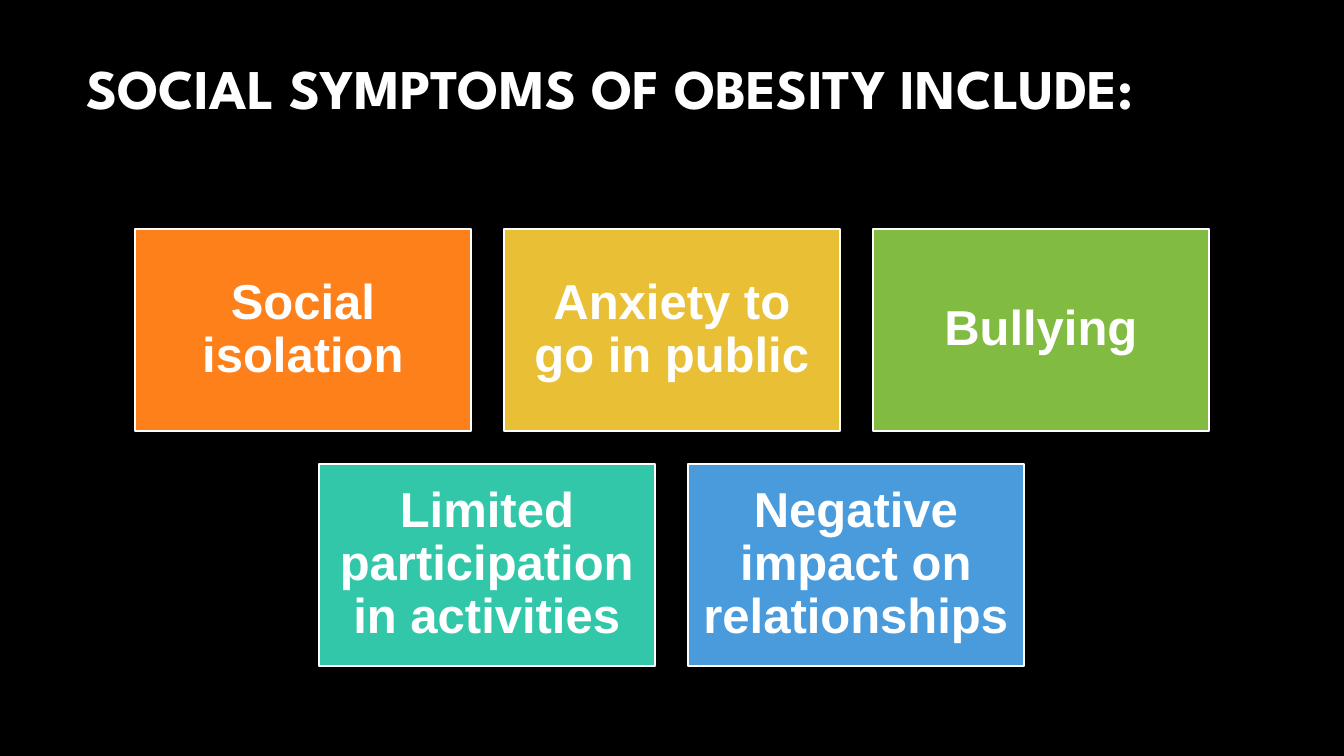
import pptx
import pptx.util
import pptx.dml.color
import pptx.enum.shapes
import pptx.enum.text

RGB = pptx.dml.color.RGBColor
BLACK = RGB(0x00, 0x00, 0x00)
WHITE = RGB(0xFF, 0xFF, 0xFF)
ORANGE = RGB(0xFE, 0x80, 0x1A)
GOLD = RGB(0xE9, 0xBF, 0x35)
GREEN = RGB(0x81, 0xBB, 0x42)
TEAL = RGB(0x32, 0xC7, 0xA9)
BLUE = RGB(0x4A, 0x9B, 0xDC)

WIDE, HIGH = 1344, 756
SCALE = 12192000 / WIDE


def px(count):
    return pptx.util.Emu(round(count * SCALE))


def write(frame, text, font="Arial", size=35, color=WHITE, align="LEFT", inset=None):
    frame.word_wrap = True
    frame.auto_size = pptx.enum.text.MSO_AUTO_SIZE.NONE
    frame.vertical_anchor = pptx.enum.text.MSO_ANCHOR.MIDDLE
    if inset is not None:
        frame.margin_left = frame.margin_right = px(inset)
        frame.margin_top = frame.margin_bottom = px(inset)
    para = frame.paragraphs[0]
    para.alignment = getattr(pptx.enum.text.PP_ALIGN, align)
    para.line_spacing = 0.9
    run = para.add_run()
    run.text = text
    run.font.name = font
    run.font.size = pptx.util.Pt(size)
    run.font.bold = True
    run.font.color.rgb = color


class Deck:
    def __init__(self):
        self.show = pptx.Presentation()
        self.show.slide_width, self.show.slide_height = px(WIDE), px(HIGH)
        self.slide = self.show.slides.add_slide(self.show.slide_layouts[5])
        fill = self.slide.background.fill
        fill.solid()
        fill.fore_color.rgb = BLACK

    def title(self, text, left, top, width, height):
        shape = self.slide.shapes.title
        shape.left, shape.top = px(left), px(top)
        shape.width, shape.height = px(width), px(height)
        write(shape.text_frame, text, font="League Spartan", size=40)

    def card(self, text, color, left, top, width, height):
        shape = self.slide.shapes.add_shape(
            pptx.enum.shapes.MSO_SHAPE.RECTANGLE,
            px(left), px(top), px(width), px(height))
        shape.shadow.inherit = False
        shape.fill.solid()
        shape.fill.fore_color.rgb = color
        shape.line.color.rgb = WHITE
        shape.line.width = pptx.util.Pt(1)
        write(shape.text_frame, text, align="CENTER", inset=15)

    def row(self, cards, top, width=336, height=202, gap=33):
        # Each row is centred on the slide
        span = len(cards) * (width + gap) - gap
        left = (WIDE - span) // 2
        for i, (text, color) in enumerate(cards):
            self.card(text, color, left + i * (width + gap), top, width, height)


def main():
    deck = Deck()

    # Heading
    deck.title("SOCIAL SYMPTOMS OF OBESITY INCLUDE:", 76, 46, 1192, 90)

    # Symptom cards
    deck.row([("Social isolation", ORANGE),
              ("Anxiety to go in public", GOLD),
              ("Bullying", GREEN)], 229)
    deck.row([("Limited participation in activities", TEAL),
              ("Negative impact on relationships", BLUE)], 464)

    deck.show.save("out.pptx")


if __name__ == "__main__":
    main()
